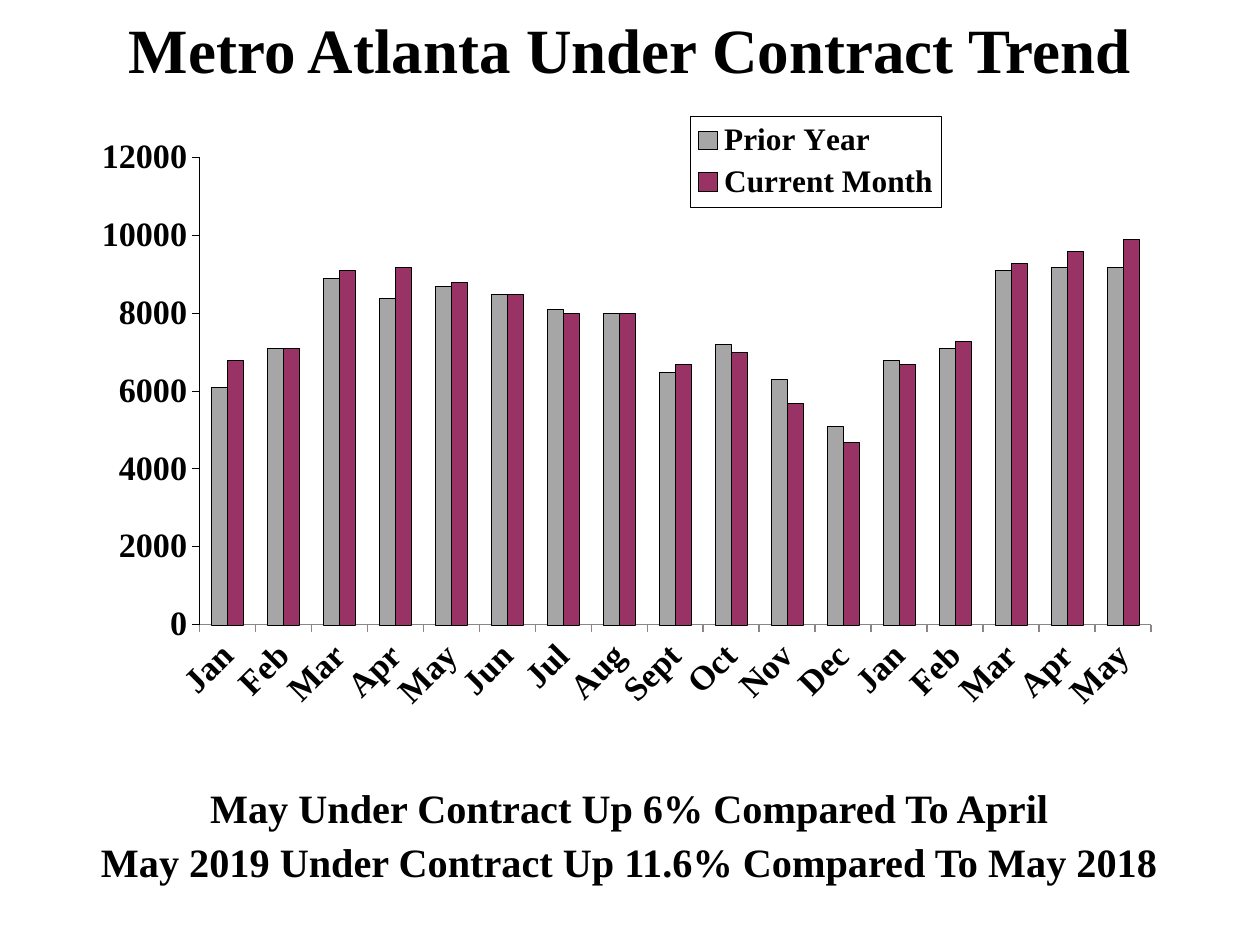
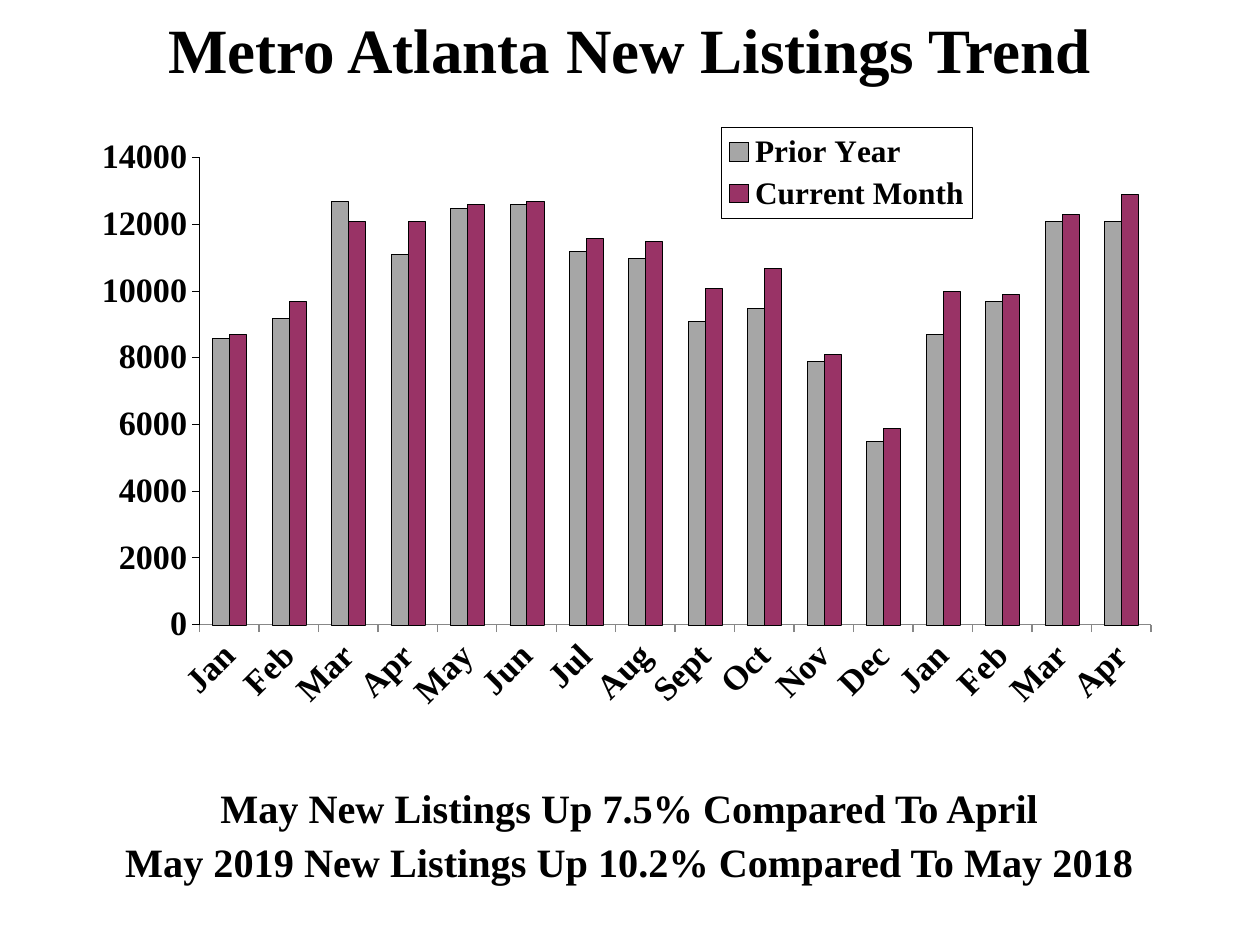
"""Build two slides of Metro Atlanta housing trends, each with a clustered column chart."""
from lxml import etree
from pptx import Presentation
from pptx.chart.data import CategoryChartData
from pptx.dml.color import RGBColor
from pptx.enum.chart import XL_CHART_TYPE, XL_LEGEND_POSITION, XL_TICK_LABEL_POSITION, XL_TICK_MARK
from pptx.enum.text import MSO_ANCHOR, PP_ALIGN
from pptx.oxml import parse_xml
from pptx.util import Inches, Pt

BLACK = RGBColor(0x00, 0x00, 0x00)
GREY = RGBColor(0xA6, 0xA6, 0xA6)
PLUM = RGBColor(0x99, 0x33, 0x66)
FONT = "Times New Roman"
CLUSTERED = XL_CHART_TYPE.COLUMN_CLUSTERED
LEGEND_RIGHT = XL_LEGEND_POSITION.RIGHT
LABELS_LOW = XL_TICK_LABEL_POSITION.LOW
TICK_OUT = XL_TICK_MARK.OUTSIDE
TOP, MIDDLE = MSO_ANCHOR.TOP, MSO_ANCHOR.MIDDLE
CENTER = PP_ALIGN.CENTER

CHART_NS = "http://schemas.openxmlformats.org/drawingml/2006/chart"
DRAWING_NS = "http://schemas.openxmlformats.org/drawingml/2006/main"
LEGEND_BOX = (
    f'<c:spPr xmlns:c="{CHART_NS}" xmlns:a="{DRAWING_NS}">'
    '<a:solidFill><a:srgbClr val="FFFFFF"/></a:solidFill>'
    '<a:ln w="3175"><a:solidFill><a:srgbClr val="000000"/></a:solidFill></a:ln></c:spPr>'
)
PLOT_AREA = (0.11, 0.095, 0.862, 0.702)
LEGEND_SIZE = (0.227, 0.137)

MONTHS = ["Jan", "Feb", "Mar", "Apr", "May", "Jun", "Jul", "Aug", "Sept", "Oct", "Nov", "Dec"]
TRENDS = [
    {
        "title": "Metro Atlanta Under Contract Trend",
        "captions": ["May Under Contract Up 6% Compared To April",
                     "May 2019 Under Contract Up 11.6% Compared To May 2018"],
        "prior": [6100, 7100, 8900, 8400, 8700, 8500, 8100, 8000, 6500,
                  7200, 6300, 5100, 6800, 7100, 9100, 9200, 9200],
        "current": [6800, 7100, 9100, 9200, 8800, 8500, 8000, 8000, 6700,
                    7000, 5700, 4700, 6700, 7300, 9300, 9600, 9900],
        "axis_top": 12000,
        "legend_corner": (0.555, 0.032),
    },
    {
        "title": "Metro Atlanta New Listings Trend",
        "captions": ["May New Listings Up 7.5% Compared To April",
                     "May 2019 New Listings Up 10.2% Compared To May 2018"],
        "prior": [8600, 9200, 12700, 11100, 12500, 12600, 11200, 11000,
                  9100, 9500, 7900, 5500, 8700, 9700, 12100, 12100],
        "current": [8700, 9700, 12100, 12100, 12600, 12700, 11600, 11500,
                    10100, 10700, 8100, 5900, 10000, 9900, 12300, 12900],
        "axis_top": 14000,
        "legend_corner": (0.583, 0.049),
    },
]

deck = Presentation()
deck.slide_width, deck.slide_height = Inches(10), Inches(7.5)
COLUMN, ROW = deck.slide_width // 100, deck.slide_height // 75


def add_lines(slide, lines, top, height, size, anchor):
    """Add a full-width box of centred bold lines and return its text frame."""
    box = slide.shapes.add_textbox(0, int(top * ROW), 100 * COLUMN, int(height * ROW))
    frame = box.text_frame
    frame.word_wrap = True
    frame.vertical_anchor = anchor
    frame.margin_top = frame.margin_bottom = 0
    frame.text = "\n".join(lines)
    for line in frame.paragraphs:
        line.alignment = CENTER
        line.font.name, line.font.size = FONT, Pt(size)
        line.font.bold, line.font.color.rgb = True, BLACK
    return frame


def manual_layout(box, inner=False):
    """Return a chart layout element that places a part by shares of the chart."""
    target = '<c:layoutTarget val="inner"/>' if inner else ""
    modes = '<c:xMode val="edge"/><c:yMode val="edge"/>'
    sides = "".join(f'<c:{side} val="{share}"/>' for side, share in zip("xywh", box))
    return parse_xml(f'<c:layout xmlns:c="{CHART_NS}"><c:manualLayout>'
                     f'{target}{modes}{sides}</c:manualLayout></c:layout>')


for trend in TRENDS:
    slide = deck.slides.add_slide(deck.slide_layouts[6])

    captions = add_lines(slide, trend["captions"], 60, 5.8, 23, TOP)
    captions.margin_top = int(2.6 * ROW)
    for caption in captions.paragraphs:
        caption.line_spacing = 0.9
    captions.paragraphs[1].space_before = Pt(6)

    data = CategoryChartData()
    data.categories = [MONTHS[i % 12] for i in range(len(trend["prior"]))]
    data.add_series("Prior Year", trend["prior"])
    data.add_series("Current Month", trend["current"])
    chart = slide.shapes.add_chart(CLUSTERED, int(6.2 * COLUMN), int(7.5 * ROW),
                                   int(87.6 * COLUMN), int(52.8 * ROW), data).chart
    chart.has_title = False
    chart.font.name, chart.font.size = FONT, Pt(19.5)
    chart.font.bold, chart.font.color.rgb = True, BLACK

    plot = chart.plots[0]
    plot.gap_width, plot.overlap, plot.vary_by_categories = 150, 0, False
    for series, fill in zip(plot.series, (GREY, PLUM)):
        series.format.fill.solid()
        series.format.fill.fore_color.rgb = fill
        series.format.line.color.rgb = BLACK
        series.format.line.width = Pt(0.03)

    months_axis, count_axis = chart.category_axis, chart.value_axis
    months_axis.tick_label_position = LABELS_LOW
    months_axis.major_tick_mark = count_axis.major_tick_mark = TICK_OUT
    for axis in (months_axis, count_axis):
        axis.tick_labels.font.name, axis.tick_labels.font.size = FONT, Pt(19.5)
        axis.tick_labels.font.bold, axis.tick_labels.font.color.rgb = True, BLACK
    months_axis._element.txPr.find(f"{{{DRAWING_NS}}}bodyPr").set("rot", "-2700000")
    count_axis.has_major_gridlines = False
    count_axis.minimum_scale, count_axis.maximum_scale = 0, trend["axis_top"]
    count_axis.major_unit = 2000
    count_axis.format.line.color.rgb = BLACK
    count_axis.format.line.width = Pt(0.01)

    chart.has_legend = True
    legend = chart.legend
    legend.position, legend.include_in_layout = LEGEND_RIGHT, False
    legend.font.name, legend.font.size = FONT, Pt(17.9)
    legend.font.bold, legend.font.color.rgb = True, BLACK

    plot_area = chart._chartSpace.chart.plotArea
    for holder, layout in ((plot_area, manual_layout(PLOT_AREA, inner=True)),
                           (legend._element, manual_layout(trend["legend_corner"] + LEGEND_SIZE))):
        for old_layout in holder.findall(etree.QName(CHART_NS, "layout").text):
            holder.remove(old_layout)
        holder.insert(0 if holder is plot_area else 1, layout)
    legend._element.find(f"{{{CHART_NS}}}overlay").addnext(parse_xml(LEGEND_BOX))

    add_lines(slide, [trend["title"]], 1.7, 4.2, 36, MIDDLE)

deck.save("out.pptx")
